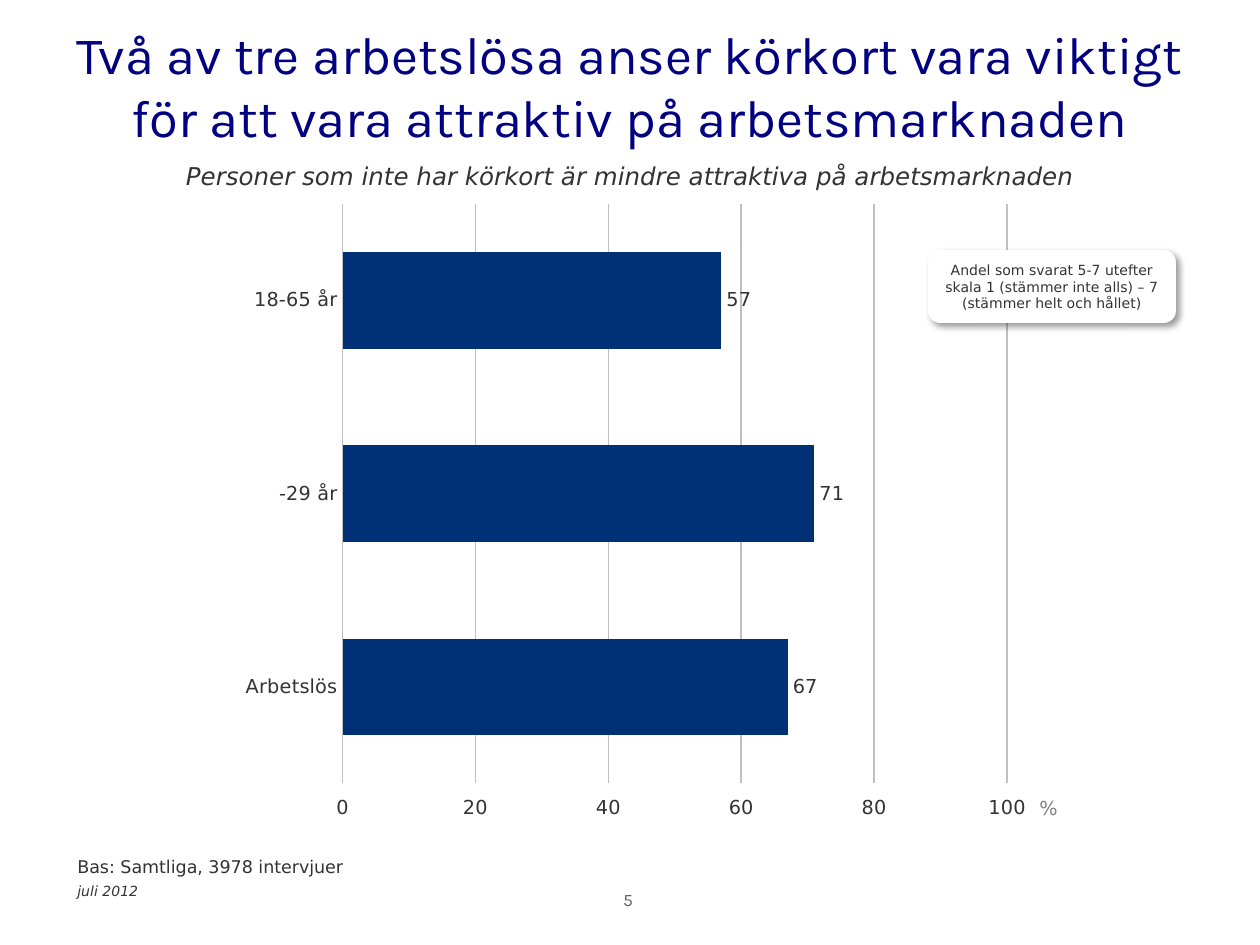
from dataclasses import dataclass
from lxml.etree import SubElement
from pptx import Presentation
from pptx.chart.data import CategoryChartData
from pptx.dml.color import RGBColor
from pptx.enum.chart import (XL_CHART_TYPE, XL_LABEL_POSITION,
                             XL_TICK_LABEL_POSITION, XL_TICK_MARK)
from pptx.enum.shapes import MSO_SHAPE
from pptx.enum.text import MSO_ANCHOR, PP_ALIGN
from pptx.oxml import parse_xml
from pptx.oxml.ns import nsdecls, qn
from pptx.util import Emu, Pt


@dataclass(frozen=True)
class Theme:
    title: str = "000080"
    text: str = "333333"
    muted: str = "808080"
    page: str = "5F5F5F"
    bar: str = "003076"
    grid: str = "C0C0C0"
    paper: str = "FFFFFF"
    head: str = "Karla"
    body: str = "DejaVu Sans"
    large: int = 30
    medium: int = 14
    label: int = 11
    base: int = 10
    small: int = 8


THEME = Theme()
SCALE = 914400 / 126


def px(*lengths):
    return [Emu(round(n * SCALE)) for n in lengths]


def rgb(code):
    return RGBColor.from_string(code)


def style(font, size, color, name=THEME.body, italic=False):
    font.size = Pt(size)
    font.color.rgb = rgb(color)
    font.name = name
    font.italic = italic


def write(shape, text, size, color, name=THEME.body, italic=False,
          align=PP_ALIGN.LEFT, anchor=MSO_ANCHOR.TOP):
    frame = shape.text_frame
    frame.word_wrap = True
    frame.vertical_anchor = anchor
    frame.text = text
    line = frame.paragraphs[0]
    line.alignment = align
    style(line.runs[0].font, size, color, name, italic)


def add_text(slide, box, text, size, color, **options):
    write(slide.shapes.add_textbox(*px(*box)), text, size, color, **options)


def add_note(slide, box, text):
    """Add a white rounded card with a soft shadow."""
    card = slide.shapes.add_shape(MSO_SHAPE.ROUNDED_RECTANGLE, *px(*box))
    card.shadow.inherit = False
    card.fill.solid()
    card.fill.fore_color.rgb = rgb(THEME.paper)
    card.line.fill.background()
    effects = card._element.spPr.find(qn("a:effectLst"))
    effects.append(parse_xml(
        f'<a:outerShdw {nsdecls("a")} blurRad="{Pt(4)}" dist="{Pt(3)}" '
        'dir="2700000" algn="tl" rotWithShape="0"><a:srgbClr val="000000">'
        '<a:alpha val="40000"/></a:srgbClr></a:outerShdw>'))
    write(card, text, THEME.small, THEME.text,
          align=PP_ALIGN.CENTER, anchor=MSO_ANCHOR.MIDDLE)


def set_plot(chart, x, y, w, h):
    """Fix the inner plot area as fractions of the chart."""
    area = chart._chartSpace.chart.plotArea
    for old in area.findall(qn("c:layout")):
        area.remove(old)
    layout = parse_xml(f'<c:layout {nsdecls("c")}><c:manualLayout/></c:layout>')
    parts = dict(layoutTarget="inner", xMode="edge", yMode="edge",
                 x=x, y=y, w=w, h=h)
    for tag, value in parts.items():
        SubElement(layout[0], qn(f"c:{tag}")).set("val", str(value))
    area.insert(0, layout)


def add_bars(slide, box, shares):
    data = CategoryChartData(number_format="0")
    data.categories = list(shares)
    data.add_series("Series 1", list(shares.values()))
    chart = slide.shapes.add_chart(
        XL_CHART_TYPE.BAR_CLUSTERED, *px(*box), data).chart
    chart.has_legend = chart.has_title = False
    style(chart.font, THEME.label, THEME.text)
    set_plot(chart, 0.242, 0.084, 0.639, 0.827)

    groups, scale = chart.category_axis, chart.value_axis
    for axis in (groups, scale):
        style(axis.tick_labels.font, THEME.label, THEME.text)
        axis.format.line.fill.background()
    groups.major_tick_mark = XL_TICK_MARK.NONE
    groups.reverse_order = True
    scale.major_tick_mark = XL_TICK_MARK.CROSS
    scale.tick_label_position = XL_TICK_LABEL_POSITION.HIGH
    scale.minimum_scale, scale.maximum_scale, scale.major_unit = 0, 100, 20
    grid = scale.major_gridlines.format.line
    grid.color.rgb = rgb(THEME.grid)
    grid.width = Pt(0.89)

    plot = chart.plots[0]
    plot.gap_width = 100
    plot.vary_by_categories = False
    fill = plot.series[0].format.fill
    fill.solid()
    fill.fore_color.rgb = rgb(THEME.bar)
    plot.has_data_labels = True
    labels = plot.data_labels
    labels.show_value = True
    labels.position = XL_LABEL_POSITION.OUTSIDE_END
    labels.number_format = "0"
    labels.number_format_is_linked = False
    style(labels.font, THEME.label, THEME.text)


def main():
    deck = Presentation()
    deck.slide_width, deck.slide_height = px(1260, 945)
    slide = deck.slides.add_slide(deck.slide_layouts[6])
    add_bars(slide, (91, 145, 1040, 701),
             {"18-65 år": 57, "-29 år": 71, "Arbetslös": 67})
    add_text(slide, (63, 6, 1134, 158),
             "Två av tre arbetslösa anser körkort vara viktigt för att vara "
             "attraktiv på arbetsmarknaden", THEME.large, THEME.title,
             name=THEME.head, align=PP_ALIGN.CENTER, anchor=MSO_ANCHOR.MIDDLE)
    add_text(slide, (64, 155, 1132, 43),
             "Personer som inte har körkort är mindre attraktiva på "
             "arbetsmarknaden", THEME.medium, THEME.text,
             italic=True, align=PP_ALIGN.CENTER)
    add_note(slide, (928, 250, 248, 73),
             "Andel som svarat 5-7 utefter skala 1 (stämmer inte alls) – 7 "
             "(stämmer helt och hållet)")
    add_text(slide, (1027, 790, 49, 37), "%", THEME.label, THEME.muted)
    add_text(slide, (65, 850, 566, 34), "Bas: Samtliga, 3978 intervjuer",
             THEME.base, THEME.text)
    add_text(slide, (65, 876, 399, 30), "juli 2012", THEME.small, THEME.text,
             italic=True)
    add_text(slide, (481, 883, 294, 60), "5", THEME.base, THEME.page,
             name=THEME.head, align=PP_ALIGN.CENTER)
    deck.save("out.pptx")


if __name__ == "__main__":
    main()
